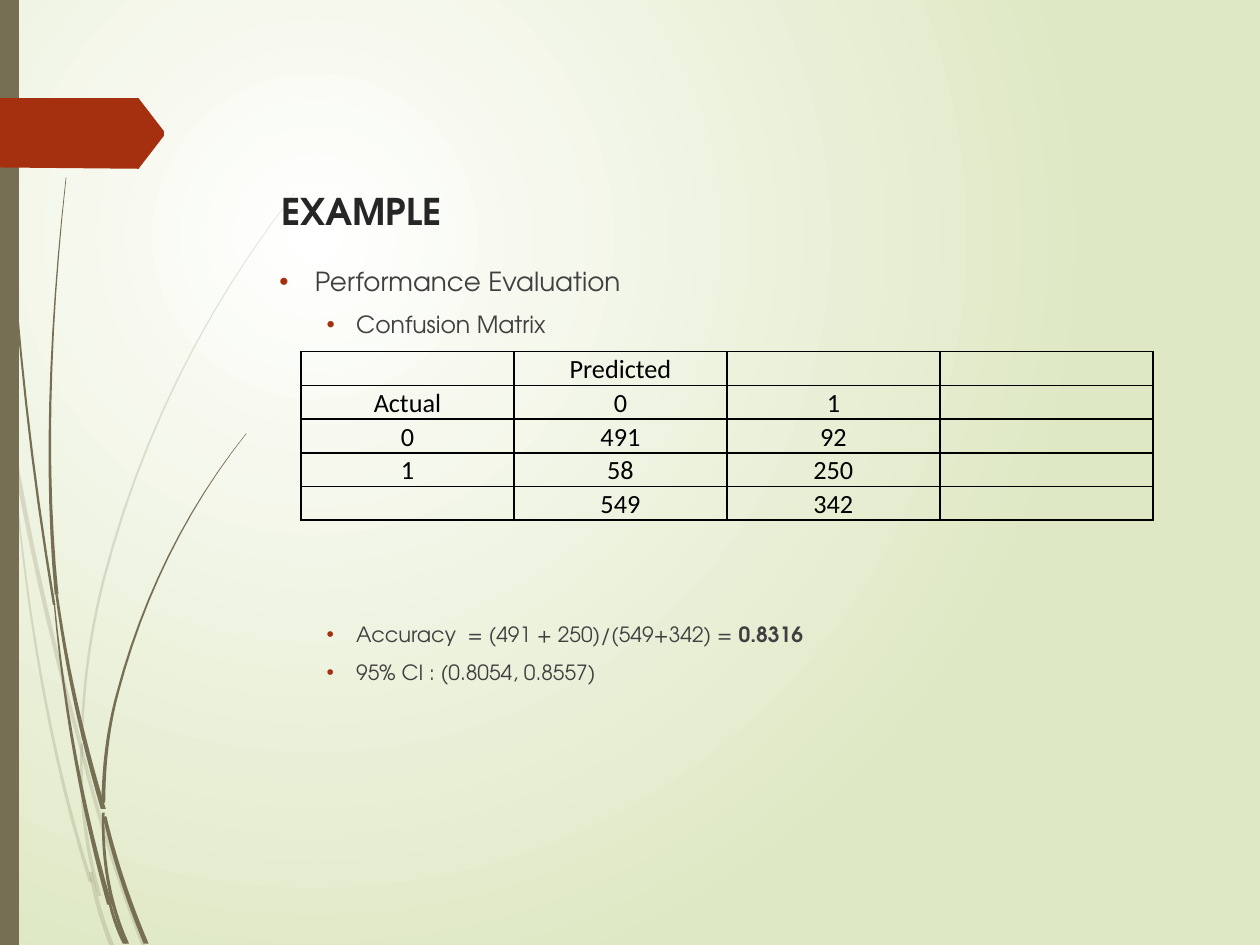
from dataclasses import dataclass
from typing import NamedTuple, Optional

from lxml import etree
from pptx import Presentation
from pptx.dml.color import RGBColor
from pptx.enum.shapes import MSO_SHAPE
from pptx.enum.text import MSO_ANCHOR, MSO_AUTO_SIZE, PP_ALIGN
from pptx.oxml.ns import qn
from pptx.util import Pt

RECTANGLE = MSO_SHAPE.RECTANGLE
TOP, LEFT, CENTER = MSO_ANCHOR.TOP, PP_ALIGN.LEFT, PP_ALIGN.CENTER
NO_AUTOFIT = MSO_AUTO_SIZE.NONE

WHITE = RGBColor(0xFF, 0xFF, 0xFF)
PALE_GREEN = RGBColor(0xDF, 0xE8, 0xC4)
OLIVE = RGBColor(0x76, 0x6F, 0x54)
RUST = RGBColor(0xA5, 0x30, 0x10)
TITLE_GREY = RGBColor(0x26, 0x26, 0x26)
TEXT_GREY = RGBColor(0x40, 0x40, 0x40)
BLACK = RGBColor(0, 0, 0)

HEADING_FONT = "TeX Gyre Adventor"
TABLE_FONT = "Calibri"
TABLE_SIZE = 15
GRID = 0.72  # points per unit of the outlines below
CURVE_STEPS = 12


class Blade(NamedTuple):
    """A tapered strand whose spine runs through three points."""
    start: tuple
    middle: tuple
    end: tuple
    start_width: float
    end_width: float


FAINT_BLADES = [
    Blade((0, 290), (27, 441), (64, 592), 4, 3),
    Blade((64, 592), (87, 674), (114, 751), 3, 3),
    Blade((10, 360), (34, 545), (72, 700), 1, 3),
    Blade((72, 692), (79, 722), (89, 751), 3, 4),
    Blade((65, 590), (67, 651), (79, 711), 2, 3),
    Blade((65, 586), (70, 523), (82, 461), 2, 2),
    Blade((82, 461), (142, 299), (234, 153), 2, 0.5),
]
SOLID_BLADES = [
    Blade((3, 0), (13, 240), (43, 480), 1, 2),
    Blade((45, 472), (60, 557), (82, 642), 2, 4),
    Blade((83, 648), (97, 698), (116, 749), 3, 4),
    Blade((43, 478), (60, 602), (87, 718), 1, 4),
    Blade((45, 472), (40, 320), (52.5, 141), 3, 0.5),
    Blade((82, 637), (85, 592), (93, 551), 3, 2),
    Blade((93, 551), (134, 441), (195.5, 344), 2, 0.5),
    Blade((82, 645), (86, 700), (101, 749), 2, 3),
    Blade((87, 716), (92, 733), (99, 749), 2, 3),
]
ARROW_TAB = [(0, 78), (110, 78), (130, 104), (130, 108), (110, 134), (0, 133)]


@dataclass
class Bullet:
    text: str
    size: float
    margin: float
    hanging: float
    space_before: float = 7.5
    bold_ending: str = ""


BULLETS = [
    Bullet("Performance Evaluation", 15, 20.25, 20.25),
    Bullet("Confusion Matrix", 13.5, 43.88, 16.88),
    # The space above this one leaves room for the table
    Bullet("Accuracy  = (491 + 250)/(549+342) = ", 12, 43.88, 16.88, 161.5, "0.8316"),
    Bullet("95% CI : (0.8054, 0.8557)", 12, 43.88, 16.88),
]
CONFUSION_MATRIX = [
    ["", "Predicted", "", ""],
    ["Actual", "0", "1", ""],
    ["0", "491", "92", ""],
    ["1", "58", "250", ""],
    ["", "549", "342", ""],
]


def add_run(paragraph, text: str, size: float, font: str, color: RGBColor,
            bold: bool = False) -> None:
    run = paragraph.add_run()
    run.text = text
    run.font.size, run.font.name, run.font.bold = Pt(size), font, bold
    run.font.color.rgb = color


def paint(shape, color: RGBColor, opacity: Optional[int] = None) -> None:
    shape.shadow.inherit = False
    shape.fill.solid()
    shape.fill.fore_color.rgb = color
    shape.line.fill.background()
    if opacity is not None:
        solid = shape.element.spPr.find(qn("a:solidFill"))
        etree.SubElement(solid[0], qn("a:alpha"), val=str(opacity * 1000))


def blade_outline(blade: Blade) -> list:
    left_edge, right_edge = [], []
    for step in range(CURVE_STEPS + 1):
        t = step / CURVE_STEPS
        # Quadratic weights that pass through the middle point at t = 0.5
        weights = ((1 - t) * (1 - 2 * t), 4 * t * (1 - t), t * (2 * t - 1))
        x, y = (sum(w * point[axis] for w, point in zip(weights, blade[:3]))
                for axis in (0, 1))
        half = (blade.start_width + t * (blade.end_width - blade.start_width)) / 2
        left_edge.append((x - half, y))
        right_edge.append((x + half, y))
    return left_edge + right_edge[::-1]


def add_outline(shapes, points: list, color: RGBColor, opacity: Optional[int] = None) -> None:
    scaled = [(Pt(x * GRID), Pt(y * GRID)) for x, y in points]
    builder = shapes.build_freeform(*scaled[0])
    builder.add_line_segments(scaled[1:], close=True)
    paint(builder.convert_to_shape(), color, opacity)


def add_bullet(paragraph, bullet: Bullet) -> None:
    paragraph.space_before = Pt(bullet.space_before)
    add_run(paragraph, bullet.text, bullet.size, HEADING_FONT, TEXT_GREY)
    if bullet.bold_ending:
        add_run(paragraph, bullet.bold_ending, bullet.size, HEADING_FONT, TEXT_GREY, True)
    props = paragraph._p.get_or_add_pPr()
    props.set("marL", str(Pt(bullet.margin)))
    props.set("indent", str(-Pt(bullet.hanging)))
    bullet_color = etree.SubElement(props, qn("a:buClr"))
    etree.SubElement(bullet_color, qn("a:srgbClr"), val=str(RUST))
    etree.SubElement(props, qn("a:buFont"), typeface="Arial")
    etree.SubElement(props, qn("a:buChar"), char="•")


def fill_cell(cell, text: str) -> None:
    cell.margin_left = cell.margin_right = Pt(4.5)
    cell.margin_top = cell.margin_bottom = Pt(0)
    paragraph = cell.text_frame.paragraphs[0]
    paragraph.alignment, paragraph.line_spacing = CENTER, 1.07
    if text:
        add_run(paragraph, text, TABLE_SIZE, TABLE_FONT, BLACK)
    else:
        etree.SubElement(paragraph._p, qn("a:endParaRPr"), sz=str(TABLE_SIZE * 100))
    cell.fill.background()
    props = cell._tc.get_or_add_tcPr()
    for i, side in enumerate(("a:lnL", "a:lnR", "a:lnT", "a:lnB")):
        border = etree.Element(qn(side), w=str(Pt(1)))
        solid = etree.SubElement(border, qn("a:solidFill"))
        etree.SubElement(solid, qn("a:srgbClr"), val=str(BLACK))
        props.insert(i, border)


def main() -> None:
    prs = Presentation()
    prs.slide_width, prs.slide_height = Pt(720), Pt(540)
    slide = prs.slides.add_slide(prs.slide_layouts[5])
    shapes = slide.shapes

    # Radial background
    background = slide.background.fill
    background.gradient()
    for stop, color in zip(background.gradient_stops, (WHITE, PALE_GREEN)):
        stop.color.rgb = color
    gradient = slide.element.find(".//" + qn("a:gradFill"))
    gradient.remove(gradient.find(qn("a:lin")))
    circle = etree.SubElement(gradient, qn("a:path"), path="circle")
    etree.SubElement(circle, qn("a:fillToRect"), l="50000", t="50000", r="100000", b="100000")

    # Grass, side bar and arrow tab
    for blades, opacity in ((FAINT_BLADES, 20), (SOLID_BLADES, None)):
        tuft = shapes.add_group_shape()
        for blade in blades:
            add_outline(tuft.shapes, blade_outline(blade), OLIVE, opacity)
    paint(shapes.add_shape(RECTANGLE, Pt(0), Pt(0), Pt(10.8), Pt(540)), OLIVE)
    add_outline(shapes, ARROW_TAB, RUST)

    # Title, in front of the grass
    title = shapes.title
    shapes.element.append(title.element)
    title.left, title.top, title.width, title.height = Pt(153.4), Pt(104.4), Pt(526.3), Pt(37.4)
    title.text_frame.auto_size = NO_AUTOFIT
    title.text_frame.vertical_anchor = TOP
    heading = title.text_frame.paragraphs[0]
    heading.alignment = LEFT
    add_run(heading, "EXAMPLE", 21, HEADING_FONT, TITLE_GREY, True)

    # Evaluation bullets
    evaluation = shapes.add_textbox(Pt(152.6), Pt(148.3), Pt(526.3), Pt(268.6)).text_frame
    evaluation.word_wrap = True
    for i, bullet in enumerate(BULLETS):
        add_bullet(evaluation.add_paragraph() if i else evaluation.paragraphs[0], bullet)

    # Confusion matrix
    matrix = shapes.add_table(len(CONFUSION_MATRIX), len(CONFUSION_MATRIX[0]),
                              Pt(172), Pt(200.9), Pt(486.8), Pt(92)).table
    matrix.first_row = matrix.horz_banding = False
    for r, row in enumerate(CONFUSION_MATRIX):
        for c, text in enumerate(row):
            fill_cell(matrix.cell(r, c), text)

    prs.save("out.pptx")


if __name__ == "__main__":
    main()
